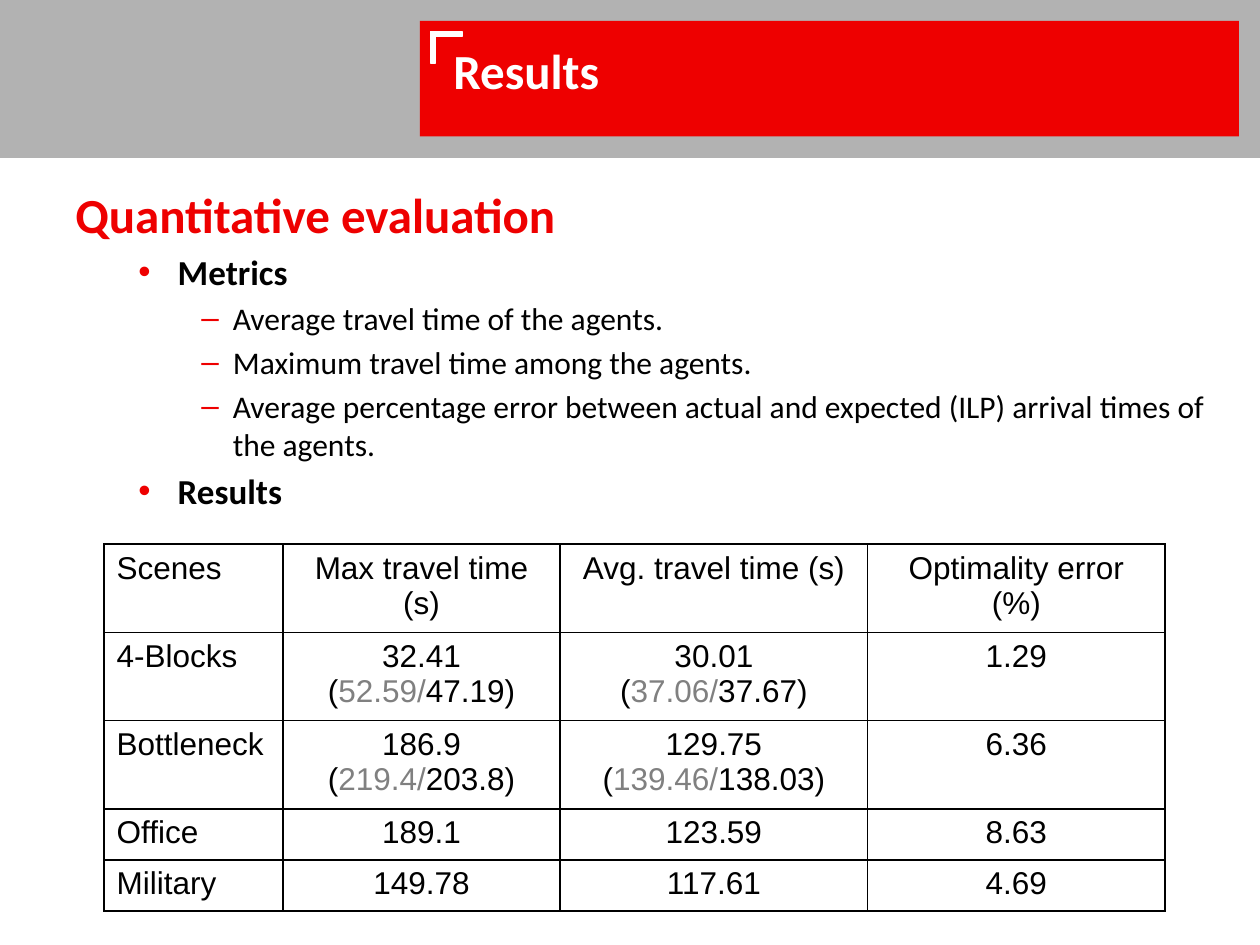
import pptx
import pptx.dml.color
import pptx.enum.shapes
import pptx.enum.text
import pptx.oxml
import pptx.oxml.ns
import pptx.util

Pt = pptx.util.Pt
RGBColor = pptx.dml.color.RGBColor
ALIGN = pptx.enum.text.PP_ALIGN

BLACK = RGBColor(0x00, 0x00, 0x00)
WHITE = RGBColor(0xFF, 0xFF, 0xFF)
RED = RGBColor(0xEE, 0x00, 0x00)
BAND_GRAY = RGBColor(0xB2, 0xB2, 0xB2)
BASELINE_GRAY = RGBColor(0x80, 0x80, 0x80)

# Text formats; left, hanging and space_before are in points
HEADING = dict(size=28, bold=True, color=RED, left=0, hanging=0, space_before=0, bullet=None)
TOPIC = dict(size=20, bold=True, color=BLACK, left=58.5, hanging=22.5, space_before=4, bullet="•")
METRIC = dict(size=18, bold=False, color=BLACK, left=90, hanging=18, space_before=3.6, bullet="–")

OUTLINE = [
    ("Quantitative evaluation", HEADING),
    ("Metrics", TOPIC),
    ("Average travel time of the agents.", METRIC),
    ("Maximum travel time among the agents.", METRIC),
    ("Average percentage error between actual and expected (ILP) arrival times of the agents.", METRIC),
    ("Results", TOPIC),
]

# A tuple holds a value and its two comparison values, the first one in gray
RESULTS = [
    ["Scenes", "Max travel time (s)", "Avg. travel time (s)", "Optimality error (%)"],
    ["4-Blocks", ("32.41 (", "52.59/", "47.19)"), ("30.01 (", "37.06/", "37.67)"), "1.29"],
    ["Bottleneck", ("186.9 (", "219.4/", "203.8)"), ("129.75 (", "139.46/", "138.03)"), "6.36"],
    ["Office", "189.1", "123.59", "8.63"],
    ["Military", "149.78", "117.61", "4.69"],
]
COLUMN_WIDTHS = [102.2, 158.4, 175.7, 170]
ROW_HEIGHTS = [47.5, 47.5, 47.5, 29.2, 29.2]


def set_font(font, size, color, name="Calibri", bold=False):
    for attribute, value in dict(name=name, size=Pt(size), bold=bold).items():
        setattr(font, attribute, value)
    font.color.rgb = color


def add_block(slide, left, top, width, height, color, outlined=True):
    block = slide.shapes.add_shape(pptx.enum.shapes.MSO_SHAPE.RECTANGLE,
                                   Pt(left), Pt(top), Pt(width), Pt(height))
    block.shadow.inherit = False
    block.fill.solid()
    block.fill.fore_color.rgb = color
    if outlined:
        block.line.color.rgb = color
        block.line.width = Pt(0.75)
    else:
        block.line.fill.background()


def add_text_frame(slide, left, top, width, height):
    frame = slide.shapes.add_textbox(Pt(left), Pt(top), Pt(width), Pt(height)).text_frame
    frame.word_wrap = True
    return frame


def add_bullet(paragraph, symbol, color):
    namespace = pptx.oxml.ns.nsdecls("a")
    properties = paragraph._p.get_or_add_pPr()
    for xml in (f'<a:buClr {namespace}><a:srgbClr val="{color}"/></a:buClr>',
                f'<a:buFont {namespace} typeface="Arial"/>',
                f'<a:buChar {namespace} char="{symbol}"/>'):
        properties.append(pptx.oxml.parse_xml(xml))


def add_outline(slide, entries):
    frame = add_text_frame(slide, 36, 102, 669.6, 396)
    for index, (text, style) in enumerate(entries):
        paragraph = frame.add_paragraph() if index else frame.paragraphs[0]
        paragraph.text = text
        if style["space_before"]:
            paragraph.space_before = Pt(style["space_before"])
        if style["bullet"]:
            properties = paragraph._p.get_or_add_pPr()
            properties.set("marL", str(Pt(style["left"])))
            properties.set("indent", str(-Pt(style["hanging"])))
            add_bullet(paragraph, style["bullet"], RED)
        set_font(paragraph.runs[0].font, style["size"], style["color"], bold=style["bold"])


def set_borders(cell, color, width):
    properties = cell._tc.get_or_add_tcPr()
    for position, side in enumerate(("lnL", "lnR", "lnT", "lnB")):
        border = pptx.oxml.parse_xml(
            f'<a:{side} {pptx.oxml.ns.nsdecls("a")} w="{Pt(width)}"><a:solidFill>'
            f'<a:srgbClr val="{color}"/></a:solidFill></a:{side}>')
        properties.insert(position, border)


def fill_cell(cell, content, is_value, centered):
    cell.fill.background()
    set_borders(cell, BLACK, 1)
    if is_value:
        # Wider margins send the bracketed comparison to its own line
        cell.margin_left = cell.margin_right = Pt(12)
    paragraph = cell.text_frame.paragraphs[0]
    paragraph.alignment = ALIGN.CENTER if centered else ALIGN.LEFT
    parts = content if isinstance(content, tuple) else (content,)
    for index, part in enumerate(parts):
        run = paragraph.add_run()
        run.text = part
        set_font(run.font, 18, BASELINE_GRAY if index == 1 else BLACK, name="Arial")


def add_results_table(slide, rows):
    table = slide.shapes.add_table(len(rows), len(rows[0]), Pt(59.5), Pt(311),
                                   Pt(sum(COLUMN_WIDTHS)), Pt(sum(ROW_HEIGHTS))).table
    table.first_row = table.horz_banding = False
    for column, width in zip(table.columns, COLUMN_WIDTHS):
        column.width = Pt(width)
    for row, height in zip(table.rows, ROW_HEIGHTS):
        row.height = Pt(height)
    for r, row in enumerate(rows):
        for c, content in enumerate(row):
            fill_cell(table.cell(r, c), content, is_value=r > 0 and c > 0, centered=c > 0)


def main():
    presentation = pptx.Presentation()
    presentation.slide_width, presentation.slide_height = Pt(720), Pt(540)
    slide = presentation.slides.add_slide(presentation.slide_layouts[6])

    # Header band, title panel and corner mark
    add_block(slide, 0, 0, 720, 90, BAND_GRAY)
    add_block(slide, 240, 12, 468, 66, RED, outlined=False)
    add_block(slide, 246, 18, 18, 3, WHITE)
    add_block(slide, 246, 18, 3, 18, WHITE)

    # Title
    title = add_text_frame(slide, 252, 19.5, 456, 66).paragraphs[0]
    title.text = "Results"
    set_font(title.runs[0].font, 28, WHITE, bold=True)

    # Body and table
    add_outline(slide, OUTLINE)
    add_results_table(slide, RESULTS)
    presentation.save("out.pptx")


if __name__ == "__main__":
    main()
